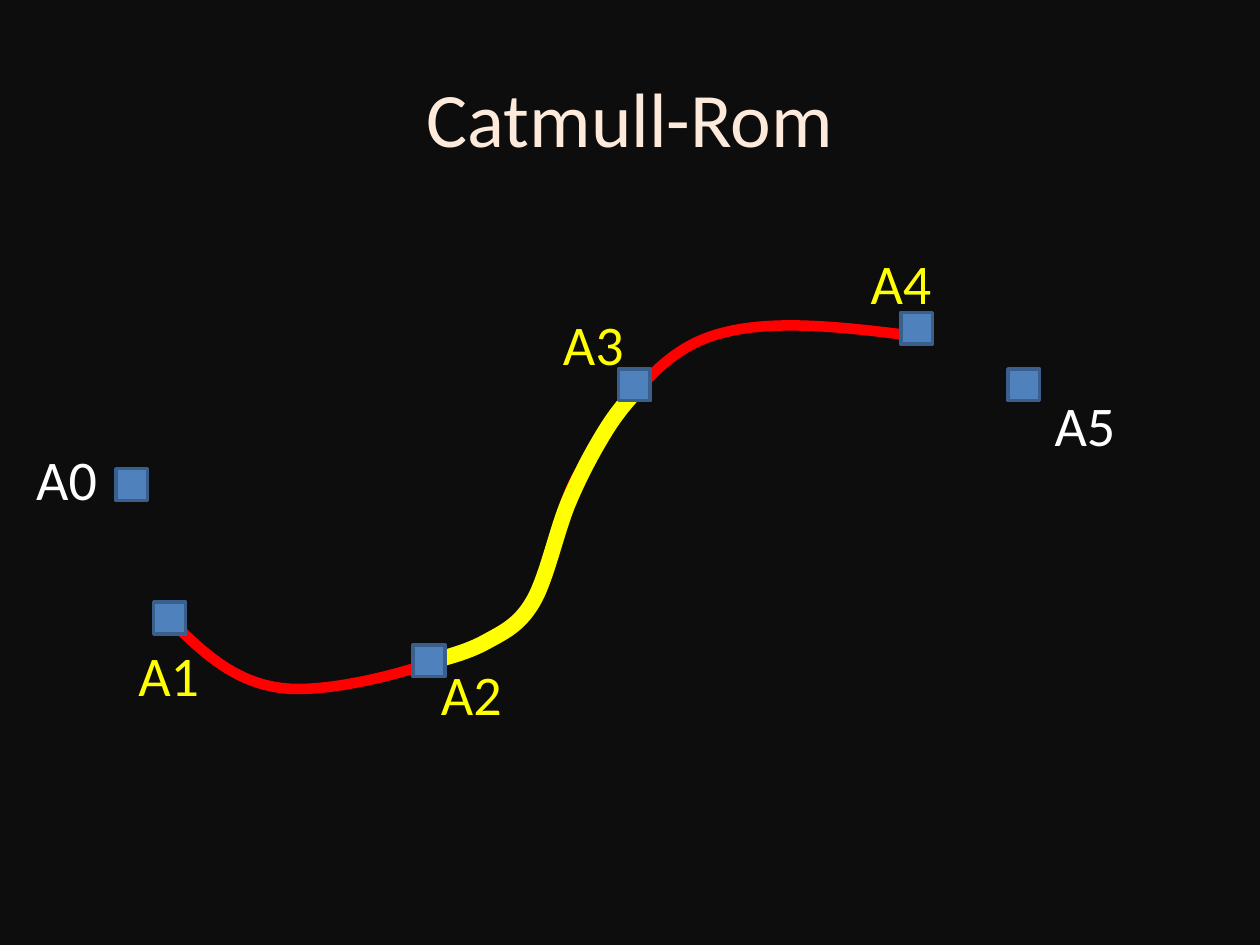
from lxml.etree import SubElement
from pptx import Presentation
from pptx.dml.color import RGBColor
from pptx.enum.shapes import MSO_SHAPE
from pptx.enum.text import MSO_ANCHOR, MSO_AUTO_SIZE, PP_ALIGN
from pptx.oxml.ns import qn
from pptx.util import Cm, Pt

COLORS = {
    "background": "0D0D0D", "title": "FDEADA", "outer": "FFFFFF", "inner": "FFFF00",
    "marker": "4F81BD", "marker_line": "3A5F8C", "curve": "FF0000", "segment": "FFFF00",
}
FONT = "Calibri"
MARKER_SIZE = 0.64
LABEL_SIZE = (1.75, 1.63)
CONTROL_POINTS = [
    ("A0", "outer", (2.34, 9.45), (0.48, 8.84)),
    ("A1", "inner", (3.1, 12.14), (2.54, 12.78)),
    ("A2", "inner", (8.33, 13), (8.64, 13.18)),
    ("A3", "inner", (12.47, 7.44), (11.1, 6.12)),
    ("A4", "inner", (18.16, 6.3), (17.3, 4.88)),
    ("A5", "outer", (20.32, 7.44), (21.01, 7.75)),
]
CURVE = [(3.4, 12.47), (5.97, 13.89), (10.31, 12.57),
         (11.73, 9.45), (14.2, 6.83), (18.49, 6.78)]
SEGMENT = [(8.46, 13.39), (9.78, 12.95), (10.74, 12.14),
           (11.46, 10.13), (12.19, 8.71), (12.85, 7.85)]


def color(name):
    """Return the named colour."""
    return RGBColor.from_string(COLORS[name])


def add_text(slide, box, text, size, color_name):
    """Add one line of text in a box and return its text frame."""
    frame = slide.shapes.add_textbox(*map(Cm, box)).text_frame
    frame.text = text
    font = frame.paragraphs[0].runs[0].font
    font.name, font.size = FONT, Pt(size)
    font.color.rgb = color(color_name)
    return frame


def add_title(slide, box):
    """Add the centred slide title."""
    frame = add_text(slide, box, "Catmull-Rom", 44, "title")
    frame.word_wrap = True
    frame.vertical_anchor = MSO_ANCHOR.MIDDLE
    frame.paragraphs[0].alignment = PP_ALIGN.CENTER


def spline_points(knots):
    """Return Bezier points of a Catmull-Rom spline through the knots."""
    points = [knots[0]]
    for before, knot, after in zip(knots, knots[1:], knots[2:]):
        tangent = [(end - start) / 6 for start, end in zip(before, after)]
        points += [tuple(k - t for k, t in zip(knot, tangent)), knot,
                   tuple(k + t for k, t in zip(knot, tangent))]
    points.append(knots[-1])
    first = tuple((a + b) / 2 for a, b in zip(points[0], points[1]))
    last = tuple((a + b) / 2 for a, b in zip(points[-2], points[-1]))
    return [points[0], first, *points[1:-1], last, points[-1]]


def add_spline(slide, box, knots, color_name, width):
    """Draw a smooth open curve through knots placed relative to the box."""
    points = [(Cm(box[0] + x), Cm(box[1] + y)) for x, y in spline_points(knots)]
    builder = slide.shapes.build_freeform(*points[0])
    builder.add_line_segments(points[1:], close=False)
    shape = builder.convert_to_shape()
    shape.shadow.inherit = False
    shape.fill.background()
    shape.line.color.rgb = color(color_name)
    shape.line.width = Pt(width)
    outline = shape.element.find(".//" + qn("a:path"))
    lines = outline.findall(qn("a:lnTo"))
    for start in range(0, len(lines), 3):
        bezier = SubElement(outline, qn("a:cubicBezTo"))
        for line in lines[start:start + 3]:
            bezier.append(line[0])
            outline.remove(line)


def add_control_point(slide, box, name, color_name, marker, label):
    """Add a square marker and its label relative to the box."""
    left, top = box[:2]
    shape = slide.shapes.add_shape(
        MSO_SHAPE.RECTANGLE, Cm(left + marker[0]), Cm(top + marker[1]),
        Cm(MARKER_SIZE), Cm(MARKER_SIZE))
    shape.shadow.inherit = False
    shape.fill.solid()
    shape.fill.fore_color.rgb = color("marker")
    shape.line.color.rgb = color("marker_line")
    shape.line.width = Pt(2)
    label_box = (left + label[0], top + label[1], *LABEL_SIZE)
    frame = add_text(slide, label_box, name, 32, color_name)
    frame.word_wrap = False
    frame.auto_size = MSO_AUTO_SIZE.SHAPE_TO_FIT_TEXT


def add_diagram(slide, box):
    """Draw the spline, its highlighted segment and the control points."""
    add_spline(slide, box, CURVE, "curve", 6)
    add_spline(slide, box, SEGMENT, "segment", 9)
    for control_point in CONTROL_POINTS:
        add_control_point(slide, box, *control_point)


def main():
    """Build and save the presentation."""
    presentation = Presentation()
    presentation.slide_width, presentation.slide_height = Cm(25.4), Cm(19.05)
    slide = presentation.slides.add_slide(presentation.slide_layouts[6])
    slide.background.fill.solid()
    slide.background.fill.fore_color.rgb = color("background")
    add_title(slide, (1.27, 0.76, 22.86, 3.18))
    add_diagram(slide, (0, 0, 25.4, 19.05))
    presentation.save("out.pptx")


if __name__ == "__main__":
    main()
